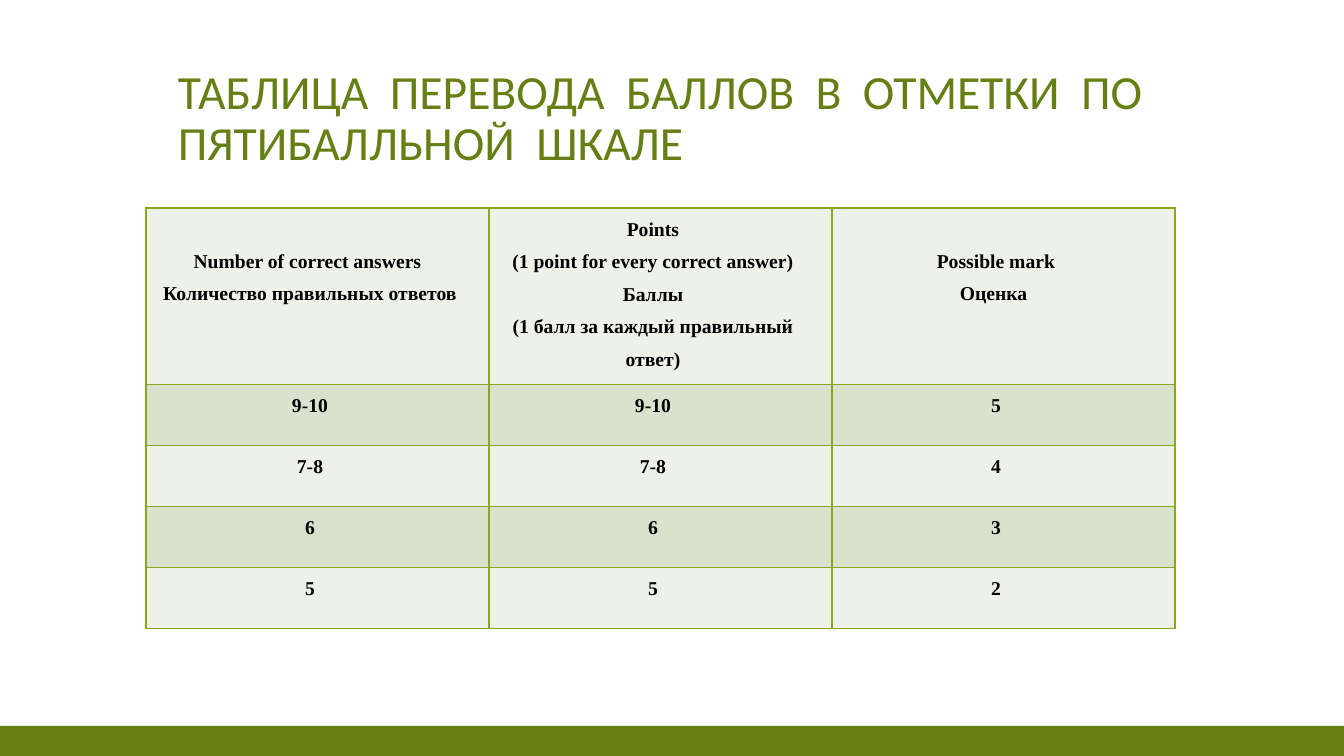
from lxml.etree import SubElement
from pptx import Presentation
from pptx.dml.color import RGBColor
from pptx.enum.shapes import MSO_SHAPE
from pptx.enum.text import MSO_ANCHOR, PP_ALIGN
from pptx.oxml.ns import qn
from pptx.util import Emu, Pt

WIDE, HIGH = 1344, 756
GREEN, EDGE, BLACK, WHITE = "657F14", "87A91B", "000000", "FFFFFF"
BANDS = ["EDF1E8", "D9E2CD"]
TITLE = "ТАБЛИЦА  ПЕРЕВОДА  БАЛЛОВ  В  ОТМЕТКИ  ПО  ПЯТИБАЛЛЬНОЙ  ШКАЛЕ"
HEADS = [
    ["Number of correct answers ", "Количество правильных ответов"],
    ["Points", "(1 point for every correct answer)", "Баллы",
     "(1 балл за каждый правильный ответ)"],
    ["Possible mark", "Оценка "],
]
MARKS = [("9-10", "5"), ("7-8", "4"), ("6", "3"), ("5", "2")]
COL, HEAD, ROW, LINE = 343, 162, 61, 32


def px(size):
    """Turn slide pixels into EMU."""
    return Emu(size * 914400 * 10 // 1008)


def tint(code):
    return RGBColor.from_string(code)


def paint(fill, code):
    fill.solid()
    fill.fore_color.rgb = tint(code)


def style(item, form):
    for name, value in form.items():
        setattr(item, name, value)


def write(frame, lines, color, para, font):
    for i, line in enumerate(lines):
        p = frame.paragraphs[0] if i == 0 else frame.add_paragraph()
        style(p, para)
        run = p.add_run()
        run.text = line
        style(run.font, font)
        run.font.color.rgb = tint(color)


def add_band(slide, left, top, width, height):
    band = slide.shapes.add_shape(
        MSO_SHAPE.RECTANGLE, px(left), px(top), px(width), px(height))
    band.shadow.inherit = False
    paint(band.fill, GREEN)
    band.line.fill.background()


def add_title(slide, left, top, width, height):
    box = slide.shapes.add_textbox(px(left), px(top), px(width), px(height))
    style(box.text_frame,
          {"word_wrap": True, "vertical_anchor": MSO_ANCHOR.BOTTOM})
    write(box.text_frame, [TITLE], GREEN, {"line_spacing": 0.9},
          {"name": "Calibri", "size": Pt(34)})


def edge(cell):
    """Draw the four borders of a cell; call it before the fill is set."""
    props = cell._tc.get_or_add_tcPr()
    for side in ("lnL", "lnR", "lnT", "lnB"):
        line = SubElement(props, qn(f"a:{side}"), w=str(Pt(1)))
        fill = SubElement(line, qn("a:solidFill"))
        SubElement(fill, qn("a:srgbClr"), val=EDGE)


def fill_cell(cell, lines, shade, drop):
    edge(cell)
    paint(cell.fill, shade)
    style(cell, {"margin_left": px(7), "margin_right": px(22),
                 "margin_top": px(drop), "margin_bottom": 0})
    write(cell.text_frame, lines, BLACK,
          {"alignment": PP_ALIGN.CENTER, "line_spacing": 1.5},
          {"name": "Times New Roman", "size": Pt(14), "bold": True})


def add_grid(slide, left, top):
    rows = [HEADS] + [[[score], [score], [mark]] for score, mark in MARKS]
    high = HEAD + ROW * len(MARKS)
    grid = slide.shapes.add_table(
        len(rows), len(HEADS), px(left), px(top),
        px(COL * len(HEADS)), px(high)).table
    style(grid, {"first_row": False, "horz_banding": False})
    for col in grid.columns:
        col.width = px(COL)
    for r, row in enumerate(rows):
        grid.rows[r].height = px(ROW if r else HEAD)
        for c, lines in enumerate(row):
            drop = LINE if len(lines) == 2 else 0
            fill_cell(grid.cell(r, c), lines, BANDS[r % 2], drop)


def main():
    deck = Presentation()
    style(deck, {"slide_width": px(WIDE), "slide_height": px(HIGH)})
    slide = deck.slides.add_slide(deck.slide_layouts[6])
    paint(slide.background.fill, WHITE)
    add_band(slide, 0, 726, WIDE, 30)
    add_title(slide, 168, 50, 1008, 126)
    add_grid(slide, 146, 208)
    deck.save("out.pptx")


if __name__ == "__main__":
    main()
